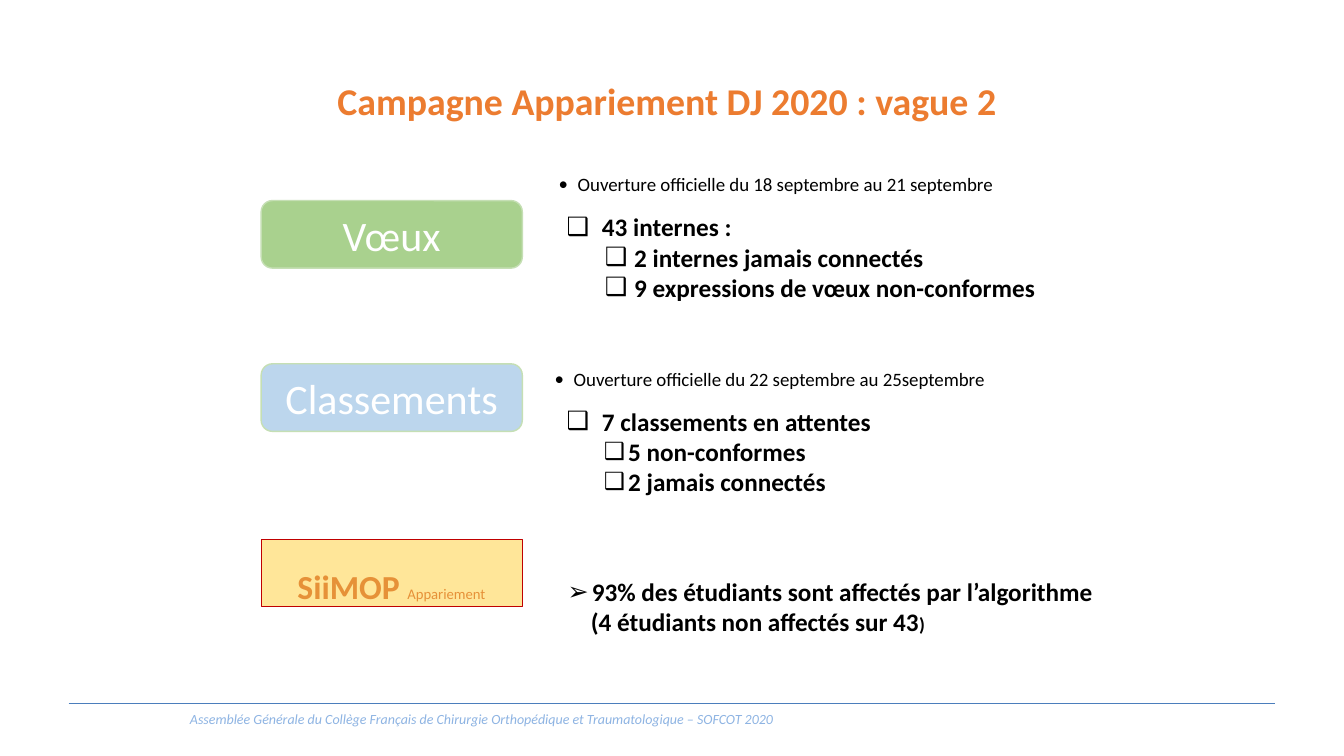
from dataclasses import dataclass

from lxml import etree
from pptx import Presentation
from pptx import util as u
from pptx.dml.color import RGBColor
from pptx.enum import shapes, text
from pptx.oxml.ns import qn


@dataclass(frozen=True)
class Theme:
    font: str = "Calibri"
    accent: str = "EC7C30"
    ink: str = "000000"
    white: str = "FFFFFF"
    green: str = "A9D18E"
    blue: str = "BCD6ED"
    step_border: str = "C5DFB4"
    yellow: str = "FFE699"
    red: str = "C00000"
    orange: str = "E69138"
    rule: str = "4B7EBC"
    footer: str = "8EB4E3"
    title_size: float = 27
    step_size: float = 30
    tool_size: float = 24
    fact_size: float = 18
    date_size: float = 13.5
    caption_size: float = 10.5
    footer_size: float = 10


@dataclass(frozen=True)
class Box:
    left: float
    top: float
    width: float
    height: float

    def lengths(self) -> list:
        return [u.Inches(v) for v in (self.left, self.top, self.width, self.height)]


@dataclass(frozen=True)
class Step:
    label: str
    top: float
    fill: str


@dataclass(frozen=True)
class Item:
    words: str
    bullet: str
    margin: float
    hang: float
    level: int = 0
    size: float = Theme.fact_size
    bold: bool = True
    before: float = 0
    bullet_scale: int = 100
    tail: str = ""


@dataclass(frozen=True)
class Details:
    placeholder: int
    box: Box
    items: tuple
    inset: float = 0.01


THEME = Theme()
STEP_LEFT, STEP_WIDTH, STEP_HEIGHT = 2.59, 2.59, 0.67

STEPS = (
    Step("Vœux", 1.99, THEME.green),
    Step("Classements", 3.61, THEME.blue),
)


def opening(words: str) -> Item:
    return Item(words, "•", 0.2, 0.19, size=THEME.date_size, bold=False)


def intern_fact(words: str) -> Item:
    return Item(words, "❑", 0.68, 0.29, level=1)


def ranking_fact(words: str) -> Item:
    return Item(words, "❑", 0.74, 0.24, level=2, bullet_scale=94)


DETAILS = (
    Details(1, Box(5.53, 1.7, 4.41, 0.24), (
        opening("Ouverture officielle du 18 septembre au 21 septembre"),
    )),
    Details(2, Box(5.61, 2.09, 4.67, 0.93), (
        Item("43 internes :", "❑", 0.36, 0.35),
        intern_fact("2 internes jamais connectés"),
        intern_fact("9 expressions de vœux non-conformes"),
    )),
    Details(3, Box(5.49, 3.52, 4.41, 1.42), (
        opening("Ouverture officielle du 22 septembre au 25septembre"),
        Item("7 classements en attentes", "❑", 0.48, 0.35, level=1, before=10.9),
        ranking_fact("5 non-conformes"),
        ranking_fact("2 jamais connectés"),
    ), inset=0.13),
    Details(4, Box(5.62, 5.71, 5.23, 0.63), (
        Item("93% des étudiants sont affectés par l’algorithme", "➢", 0.25, 0.24),
        Item("(4 étudiants non affectés sur 43", "", 0.24, 0, tail=")"),
    )),
)


def style(run, size: float, color: str, bold: bool = False, italic: bool = False) -> None:
    run.font.name = THEME.font
    run.font.size = u.Pt(size)
    run.font.color.rgb = RGBColor.from_string(color)
    run.font.bold = bold
    run.font.italic = italic


def prepare(frame, inset: float, anchor=text.MSO_ANCHOR.TOP) -> None:
    frame.word_wrap = True
    frame.auto_size = text.MSO_AUTO_SIZE.NONE
    frame.vertical_anchor = anchor
    frame.margin_left = frame.margin_right = frame.margin_bottom = 0
    frame.margin_top = u.Inches(inset)


def place(shape, box: Box) -> None:
    shape.left, shape.top, shape.width, shape.height = box.lengths()


def set_bullet(paragraph, item: Item) -> None:
    props = paragraph._p.get_or_add_pPr()
    props.set("marL", str(u.Inches(item.margin)))
    props.set("indent", str(-u.Inches(item.hang)))
    if not item.bullet:
        etree.SubElement(props, qn("a:buNone"))
        return
    etree.SubElement(props, qn("a:buSzPct"), val=str(item.bullet_scale * 1000))
    etree.SubElement(props, qn("a:buFont"), typeface=THEME.font)
    etree.SubElement(props, qn("a:buChar"), char=item.bullet)
    tabs = etree.SubElement(props, qn("a:tabLst"))
    etree.SubElement(tabs, qn("a:tab"), pos=str(u.Inches(item.margin)), algn="l")


def draw_title(slide) -> None:
    title = slide.shapes.title
    place(title, Box(3.33, 0.75, 6.57, 0.48))
    title.text_frame.text = "Campagne Appariement DJ 2020 : vague 2"
    prepare(title.text_frame, 0.01, text.MSO_ANCHOR.MIDDLE)
    heading = title.text_frame.paragraphs[0]
    heading.alignment = text.PP_ALIGN.CENTER
    style(heading.runs[0], THEME.title_size, THEME.accent, bold=True)


def draw_details(slide, details: Details) -> None:
    body = slide.placeholders[details.placeholder]
    place(body, details.box)
    frame = body.text_frame
    frame.text = "\n".join(item.words for item in details.items)
    prepare(frame, details.inset)
    for paragraph, item in zip(frame.paragraphs, details.items):
        paragraph.level = item.level
        set_bullet(paragraph, item)
        paragraph.alignment = text.PP_ALIGN.LEFT
        paragraph.space_before = u.Pt(item.before)
        style(paragraph.runs[0], item.size, THEME.ink, item.bold)
        if item.tail:
            closing = paragraph.add_run()
            closing.text = item.tail
            style(closing, THEME.date_size, THEME.ink, item.bold)


def draw_panel(slide, kind, top: float, fill: str, border: str, weight: float):
    box = Box(STEP_LEFT, top, STEP_WIDTH, STEP_HEIGHT)
    panel = slide.shapes.add_shape(kind, *box.lengths())
    panel.shadow.inherit = False
    panel.fill.solid()
    panel.fill.fore_color.rgb = RGBColor.from_string(fill)
    panel.line.color.rgb = RGBColor.from_string(border)
    panel.line.width = u.Pt(weight)
    return panel


def draw_step(slide, step: Step) -> None:
    panel = draw_panel(slide, shapes.MSO_SHAPE.ROUNDED_RECTANGLE, step.top,
                       step.fill, THEME.step_border, 1)
    panel.text_frame.text = step.label
    prepare(panel.text_frame, 0, text.MSO_ANCHOR.MIDDLE)
    label = panel.text_frame.paragraphs[0]
    label.alignment = text.PP_ALIGN.CENTER
    style(label.runs[0], THEME.step_size, THEME.white)


def draw_matching(slide) -> None:
    panel = draw_panel(slide, shapes.MSO_SHAPE.RECTANGLE, 5.35,
                       THEME.yellow, THEME.red, 0.75)
    panel.text_frame.text = "SiiMOP "
    prepare(panel.text_frame, 0.26)
    panel.text_frame.margin_left = u.Inches(0.36)
    label = panel.text_frame.paragraphs[0]
    label.alignment = text.PP_ALIGN.LEFT
    style(label.runs[0], THEME.tool_size, THEME.orange, bold=True)
    caption = label.add_run()
    caption.text = "Appariement"
    style(caption, THEME.caption_size, THEME.orange)


def draw_footer(slide) -> None:
    ends = [u.Inches(v) for v in (0.68, 6.98, 12.65, 6.98)]
    rule = slide.shapes.add_connector(shapes.MSO_CONNECTOR.STRAIGHT, *ends)
    rule.line.color.rgb = RGBColor.from_string(THEME.rule)
    rule.line.width = u.Pt(0.75)
    etree.SubElement(rule._element.spPr, qn("a:effectLst"))
    event = slide.shapes.add_textbox(*Box(0.68, 7, 8.19, 0.27).lengths())
    event.text_frame.text = ("Assemblée Générale du Collège Français de Chirurgie "
                             "Orthopédique et Traumatologique – SOFCOT 2020")
    prepare(event.text_frame, 0.05)
    line = event.text_frame.paragraphs[0]
    line.alignment = text.PP_ALIGN.CENTER
    style(line.runs[0], THEME.footer_size, THEME.footer, italic=True)


def main() -> None:
    deck = Presentation()
    deck.slide_width, deck.slide_height = u.Inches(13.33), u.Inches(7.5)
    slide = deck.slides.add_slide(deck.slide_layouts.get_by_name("Comparison"))
    draw_footer(slide)
    draw_title(slide)
    for step in STEPS:
        draw_step(slide, step)
    draw_matching(slide)
    for details in DETAILS:
        draw_details(slide, details)
    deck.save("out.pptx")


if __name__ == "__main__":
    main()
